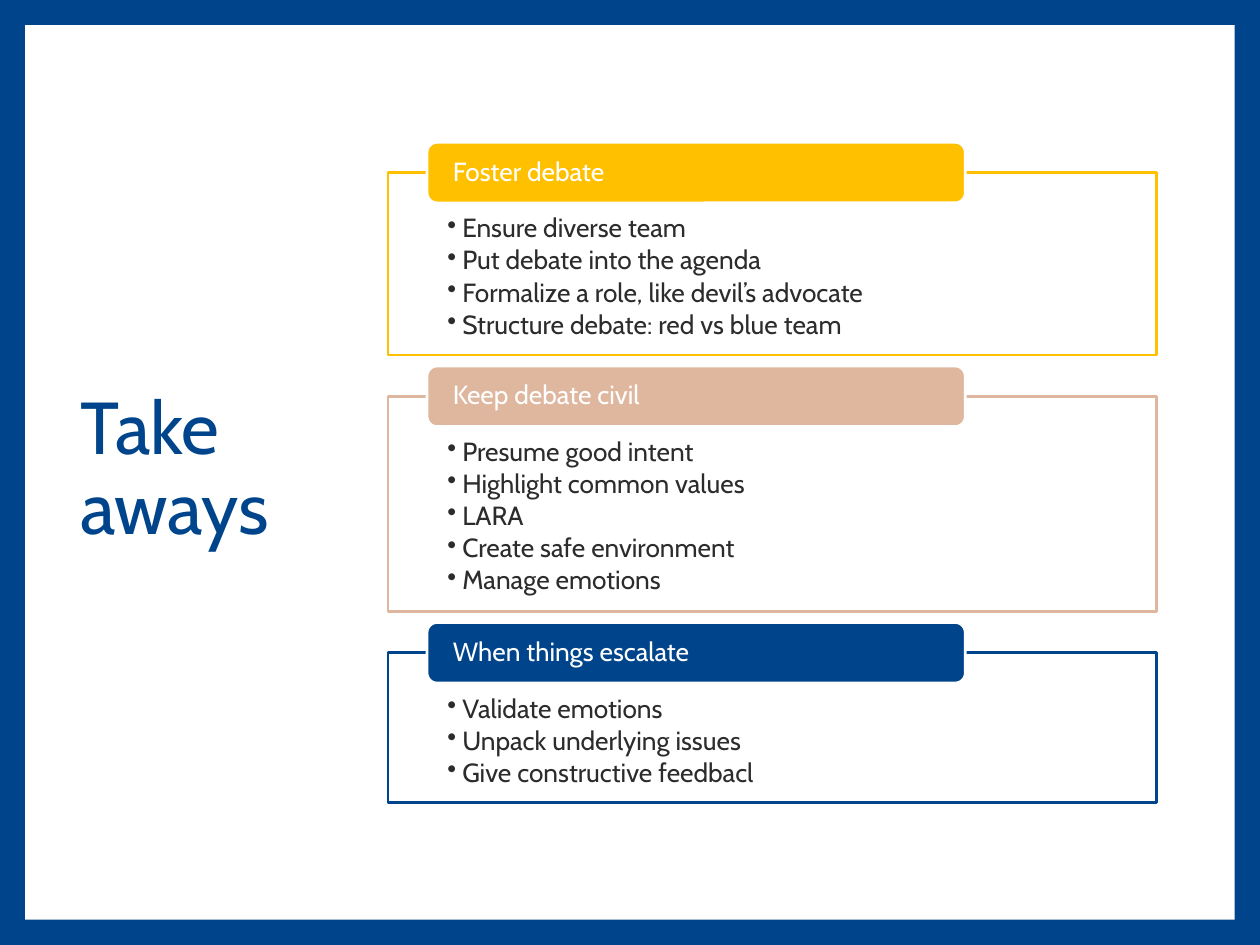
from lxml import etree
from pptx import Presentation
from pptx.dml.color import RGBColor
from pptx.enum.shapes import MSO_SHAPE
from pptx.enum.text import MSO_ANCHOR, MSO_AUTO_SIZE, PP_ALIGN
from pptx.oxml.ns import qn
from pptx.util import Cm, Pt

RECT = MSO_SHAPE.RECTANGLE
ROUND = MSO_SHAPE.ROUNDED_RECTANGLE
TOP = MSO_ANCHOR.TOP
MIDDLE = MSO_ANCHOR.MIDDLE
LEFT = PP_ALIGN.LEFT
FIXED = MSO_AUTO_SIZE.NONE

FONT = "Cabin"
BLUE = "00458B"
WHITE = "FFFFFF"
DARK = "2C2C2C"

GROUPS = [
    ("Foster debate", "FFC000", [
        "Ensure diverse team",
        "Put debate into the agenda",
        "Formalize a role, like devil’s advocate",
        "Structure debate: red vs blue team",
    ]),
    ("Keep debate civil", "DFB79F", [
        "Presume good intent",
        "Highlight common values",
        "LARA",
        "Create safe environment",
        "Manage emotions",
    ]),
    ("When things escalate", BLUE, [
        "Validate emotions",
        "Unpack underlying issues",
        "Give constructive feedbacl",
    ]),
]


def color(code):
    return RGBColor.from_string(code)


def add_box(slide, kind, left, top, width, height, fill, line=None):
    box = slide.shapes.add_shape(kind, Cm(left), Cm(top), Cm(width), Cm(height))
    box.shadow.inherit = False
    box.fill.solid()
    box.fill.fore_color.rgb = color(fill)
    if line:
        box.line.color.rgb = color(line)
        box.line.width = Pt(1.5)
    else:
        box.line.fill.background()
    return box


def add_bullet(para):
    props = para._p.get_or_add_pPr()
    props.set("marL", str(Cm(0.3)))
    props.set("indent", str(Cm(-0.3)))
    etree.SubElement(props, qn("a:buChar"), char="•")


def set_text(shape, lines, size=15, ink=DARK, anchor=MIDDLE,
             inset=(0.25, 0.13), after=0, bullet=False):
    frame = shape.text_frame
    frame.word_wrap = True
    frame.auto_size = FIXED
    frame.vertical_anchor = anchor
    frame.margin_left = frame.margin_right = Cm(inset[0])
    frame.margin_top = frame.margin_bottom = Cm(inset[1])
    frame.text = "\n".join(lines)
    for para in frame.paragraphs:
        para.alignment = LEFT
        para.line_spacing = 0.9
        para.space_after = Pt(after)
        para.font.name = FONT
        para.font.size = Pt(size)
        para.font.color.rgb = color(ink)
        if bullet:
            add_bullet(para)


def add_title(slide, text):
    title = slide.shapes.title
    title.left, title.top = Cm(1.37), Cm(1.7)
    title.width, title.height = Cm(7.01), Cm(15.57)
    set_text(title, [text], size=42, ink=BLUE)


def add_page(slide):
    slide.background.fill.solid()
    slide.background.fill.fore_color.rgb = color(BLUE)
    page = add_box(slide, RECT, 0.51, 0.51, 24.38, 18.03, WHITE)
    slide.shapes.title._element.addprevious(page._element)


def add_group(slide, top, height, head, tint, items):
    panel = add_box(slide, RECT, 7.82, top, 15.49, height, WHITE, tint)
    set_text(panel, items, anchor=TOP, inset=(1.2, 0.86), after=2.1, bullet=True)
    panel.text_frame.margin_bottom = Cm(0.3)
    label = add_box(slide, ROUND, 8.61, top - 0.61, 10.85, 1.22, tint, WHITE)
    set_text(label, [head], ink=WHITE, inset=(0.46, 0))


def main():
    deck = Presentation()
    deck.slide_width, deck.slide_height = Cm(25.4), Cm(19.05)
    slide = deck.slides.add_slide(deck.slide_layouts[5])
    add_page(slide)
    add_title(slide, "Take aways")
    top = 3.48
    for head, tint, items in GROUPS:
        height = 1.04 + 0.66 * len(items)
        add_group(slide, top, height, head, tint, items)
        top += height + 0.83
    deck.save("out.pptx")


if __name__ == "__main__":
    main()
